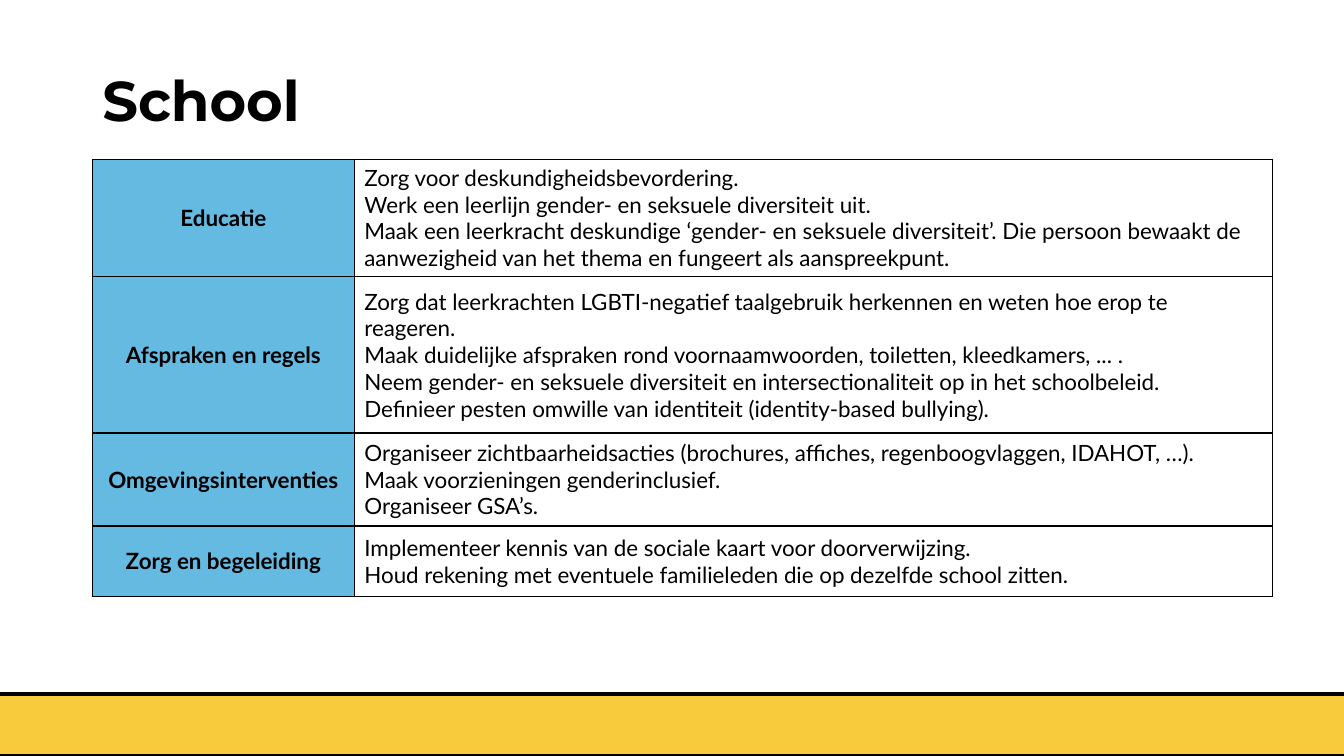
from lxml.etree import SubElement
from pptx import Presentation
from pptx.dml.color import RGBColor
from pptx.enum.shapes import MSO_SHAPE
from pptx.enum.text import MSO_ANCHOR as ANCHOR, PP_ALIGN as ALIGN
from pptx.oxml.ns import qn
from pptx.util import Cm, Pt

BLACK = RGBColor(0x00, 0x00, 0x00)
BLUE = RGBColor(0x65, 0xBA, 0xE1)
YELLOW = RGBColor(0xF7, 0xCB, 0x3B)

TITLE_FORMAT = {"name": "Montserrat", "size": Pt(40), "bold": True}
LABEL_FORMAT = {"name": "Lato", "size": Pt(16), "bold": True}
BODY_FORMAT = {"name": "Lato", "size": Pt(16), "bold": False}

COLUMN_WIDTHS = (6.6, 23.14)
MEASURES = [
    ("Educatie", 2.87, [
        "Zorg voor deskundigheidsbevordering.",
        "Werk een leerlijn gender- en seksuele diversiteit uit.",
        "Maak een leerkracht deskundige ‘gender- en seksuele diversiteit’. Die persoon "
        "bewaakt de aanwezigheid van het thema en fungeert als aanspreekpunt.",
    ]),
    ("Afspraken en regels", 3.94, [
        "Zorg dat leerkrachten LGBTI-negatief taalgebruik herkennen en weten hoe erop te reageren.",
        "Maak duidelijke afspraken rond voornaamwoorden, toiletten, kleedkamers, ... .",
        "Neem gender- en seksuele diversiteit en intersectionaliteit op in het schoolbeleid.",
        "Definieer pesten omwille van identiteit (identity-based bullying).",
    ]),
    ("Omgevingsinterventies", 2.34, [
        "Organiseer zichtbaarheidsacties (brochures, affiches, regenboogvlaggen, IDAHOT, …).",
        "Maak voorzieningen genderinclusief.",
        "Organiseer GSA’s.",
    ]),
    ("Zorg en begeleiding", 1.78, [
        "Implementeer kennis van de sociale kaart voor doorverwijzing.",
        "Houd rekening met eventuele familieleden die op dezelfde school zitten.",
    ]),
]


def write_lines(tf, lines, fmt, align=ALIGN.LEFT, spacing=1.0):
    """Fill a text frame with one formatted paragraph per line."""
    for i, line in enumerate(lines):
        p = tf.add_paragraph() if i else tf.paragraphs[0]
        p.alignment = align
        p.line_spacing = spacing
        r = p.add_run()
        r.text = line
        r.font.color.rgb = BLACK
        for name, value in fmt.items():
            setattr(r.font, name, value)


def set_borders(cell):
    """Draw a thin black line on every side of a table cell."""
    tc_pr = cell._tc.get_or_add_tcPr()
    for side in ("lnL", "lnR", "lnT", "lnB"):
        ln = SubElement(tc_pr, qn(f"a:{side}"), w=str(Pt(1)))
        fill = SubElement(ln, qn("a:solidFill"))
        SubElement(fill, qn("a:srgbClr"), val=str(BLACK))


def add_footer_band(s, left, top, width, height):
    """Add the outlined yellow band at the foot of the slide."""
    sp = s.shapes.add_shape(MSO_SHAPE.RECTANGLE, left, top, width, height)
    sp.shadow.inherit = False
    sp.fill.solid()
    sp.fill.fore_color.rgb = YELLOW
    sp.line.color.rgb = BLACK
    sp.line.width = Pt(3)


def add_title(s, left, top, width, height, text):
    """Add the slide title, centred vertically in its box."""
    tf = s.shapes.add_textbox(left, top, width, height).text_frame
    tf.word_wrap = True
    tf.vertical_anchor = ANCHOR.MIDDLE
    write_lines(tf, [text], TITLE_FORMAT, spacing=0.9)


def add_measures_table(s, left, top, width, height):
    """Add the table of measures with a blue label column."""
    table = s.shapes.add_table(len(MEASURES), 2, left, top, width, height).table
    table.first_row = table.horz_banding = False
    for column, column_width in zip(table.columns, COLUMN_WIDTHS):
        column.width = Cm(column_width)
    for row, (label, row_height, lines) in zip(table.rows, MEASURES):
        row.height = Cm(row_height)
        label_cell, body_cell = row.cells
        for cell in row.cells:
            cell.vertical_anchor = ANCHOR.MIDDLE
            set_borders(cell)
        label_cell.fill.solid()
        label_cell.fill.fore_color.rgb = BLUE
        body_cell.fill.background()
        write_lines(label_cell.text_frame, [label], LABEL_FORMAT, ALIGN.CENTER)
        write_lines(body_cell.text_frame, lines, BODY_FORMAT)


def main():
    """Build the slide and save it."""
    prs = Presentation()
    prs.slide_width, prs.slide_height = Cm(33.87), Cm(19.05)
    s = prs.slides.add_slide(prs.slide_layouts[6])
    add_footer_band(s, Cm(-0.94), Cm(17.48), Cm(35.74), Cm(1.57))
    add_title(s, Cm(2.33), Cm(1.02), Cm(29.21), Cm(3.18), "School")
    table_height = sum(row_height for _, row_height, _ in MEASURES)
    add_measures_table(s, Cm(2.33), Cm(4.01), Cm(sum(COLUMN_WIDTHS)), Cm(table_height))
    prs.save("out.pptx")


if __name__ == "__main__":
    main()
